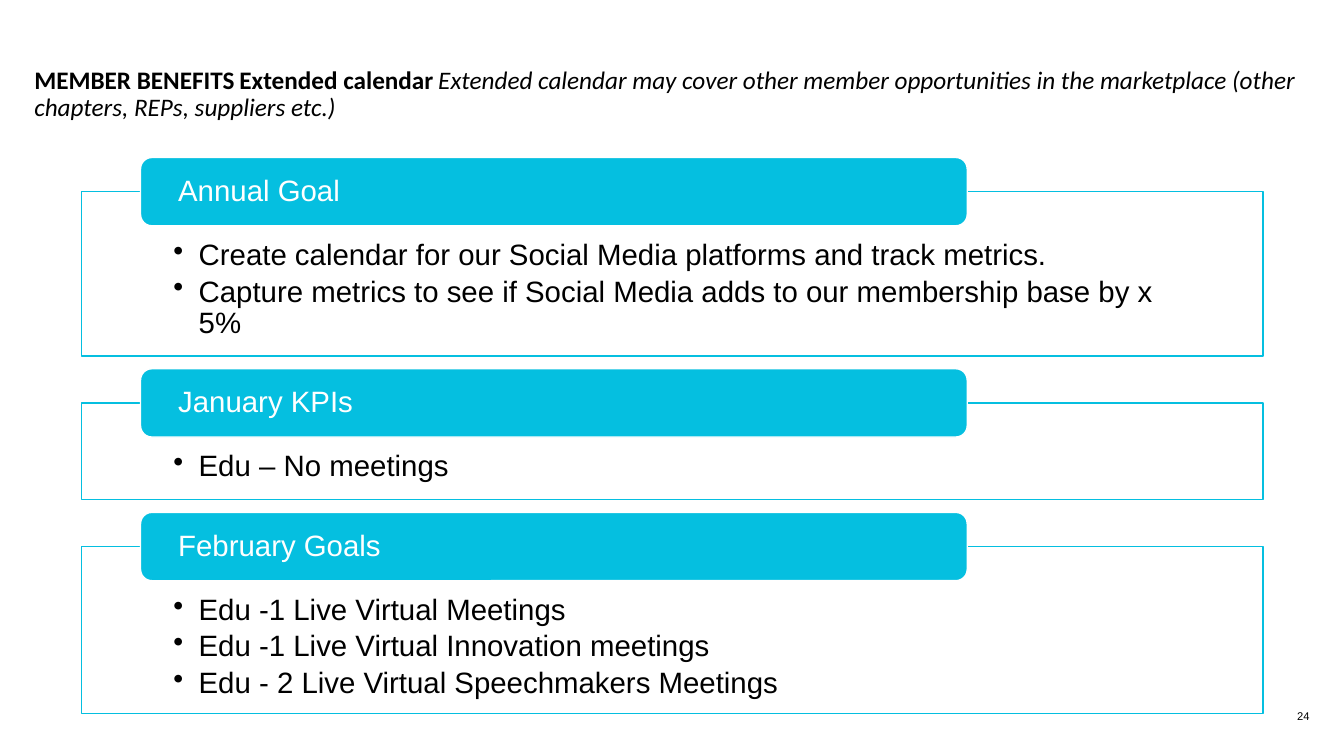
from pptx import Presentation
from pptx.dml.color import RGBColor
from pptx.enum.shapes import MSO_SHAPE
from pptx.enum.text import MSO_ANCHOR, MSO_AUTO_SIZE, PP_ALIGN
from pptx.oxml.ns import qn
from pptx.util import Pt
from lxml import etree

RECT, ROUND_RECT = MSO_SHAPE.RECTANGLE, MSO_SHAPE.ROUNDED_RECTANGLE
TOP, MIDDLE, BOTTOM = MSO_ANCHOR.TOP, MSO_ANCHOR.MIDDLE, MSO_ANCHOR.BOTTOM
LEFT, RIGHT = PP_ALIGN.LEFT, PP_ALIGN.RIGHT
NO_FIT = MSO_AUTO_SIZE.NONE
BLACK = RGBColor(0x00, 0x00, 0x00)
WHITE = RGBColor(0xFF, 0xFF, 0xFF)
CYAN = RGBColor(0x05, 0xBF, 0xE0)


def write(sp, paragraphs, size=21, color=BLACK, font="Arial", anchor=TOP,
          align=LEFT, insets=(0, 0, 0, 0), spacing=0.9, after=0, bullet=False):
    """Fill a shape; each paragraph is a list of (text, run format) pairs."""
    tf = sp.text_frame
    tf.word_wrap, tf.auto_size, tf.vertical_anchor = True, NO_FIT, anchor
    (tf.margin_left, tf.margin_top,
     tf.margin_right, tf.margin_bottom) = [Pt(v) for v in insets]
    for i, runs in enumerate(paragraphs):
        p = tf.add_paragraph() if i else tf.paragraphs[0]
        p.alignment, p.line_spacing, p.space_after = align, spacing, Pt(after)
        if bullet:
            pPr = p._p.get_or_add_pPr()
            pPr.set("marL", str(Pt(18)))
            pPr.set("indent", str(-Pt(18)))
            etree.SubElement(pPr, qn("a:buChar"), char="•")
        for text, fmt in runs:
            r = p.add_run()
            r.text = text
            r.font.name = fmt.get("font", font)
            r.font.size = Pt(fmt.get("size", size))
            r.font.bold = fmt.get("bold", False)
            r.font.italic = fmt.get("italic", False)
            r.font.color.rgb = color


def add_box(s, kind, left, top, width, height, fill, line):
    sp = s.shapes.add_shape(kind, Pt(left), Pt(top), Pt(width), Pt(height))
    sp.shadow.inherit = False
    sp.fill.solid()
    sp.fill.fore_color.rgb = fill
    sp.line.color.rgb = line
    sp.line.width = Pt(1)
    return sp


prs = Presentation()
prs.slide_width, prs.slide_height = Pt(960), Pt(540)
s = prs.slides.add_slide(prs.slide_layouts[5])

# Title
title = s.shapes.title
title.left, title.top, title.width, title.height = Pt(24.5), Pt(26), Pt(910), Pt(83)
gap = (" ", {"size": 12, "font": "Arial"})
write(title, [[
    ("MEMBER BENEFITS", {"bold": True}), gap,
    ("Extended calendar", {"bold": True}), gap,
    ("Extended calendar may cover other member opportunities in the marketplace "
     "(other chapters, REPs, suppliers etc.)", {"italic": True}),
]], size=18, font="Calibri", anchor=MIDDLE)

# Goal cards: heading tab overlapping the top edge of a bulleted frame
cards = [
    ("Annual Goal", 117.4, [
        "Create calendar for our Social Media platforms and track metrics.",
        "Capture metrics to see if Social Media adds to our membership base by x 5%"]),
    ("January KPIs", 69.1, ["Edu – No meetings"]),
    ("February Goals", 119.5, [
        "Edu -1 Live Virtual Meetings",
        "Edu -1 Live Virtual Innovation meetings",
        "Edu - 2 Live Virtual Speechmakers Meetings"]),
]
CARD_GAP, TAB_RISE = 33.5, 24.4
top = 136.9
for heading, height, items in cards:
    frame = add_box(s, RECT, 58.4, top, 843.8, height, WHITE, CYAN)
    write(frame, [[(item, {})] for item in items],
          insets=(65.5, 34.6, 65.5, 11.5), after=3.5, bullet=True)
    tab = add_box(s, ROUND_RECT, 100.4, top - TAB_RISE, 590.5, 48.8, CYAN, WHITE)
    write(tab, [[(heading, {})]], color=WHITE, anchor=MIDDLE, insets=(24.5, 0, 24.5, 0))
    top += height + CARD_GAP

# Slide number
number = s.shapes.add_textbox(Pt(903), Pt(500.5), Pt(32.4), Pt(16))
write(number, [[("24", {})]], size=8, anchor=BOTTOM, align=RIGHT, spacing=1.0)

prs.save("out.pptx")
